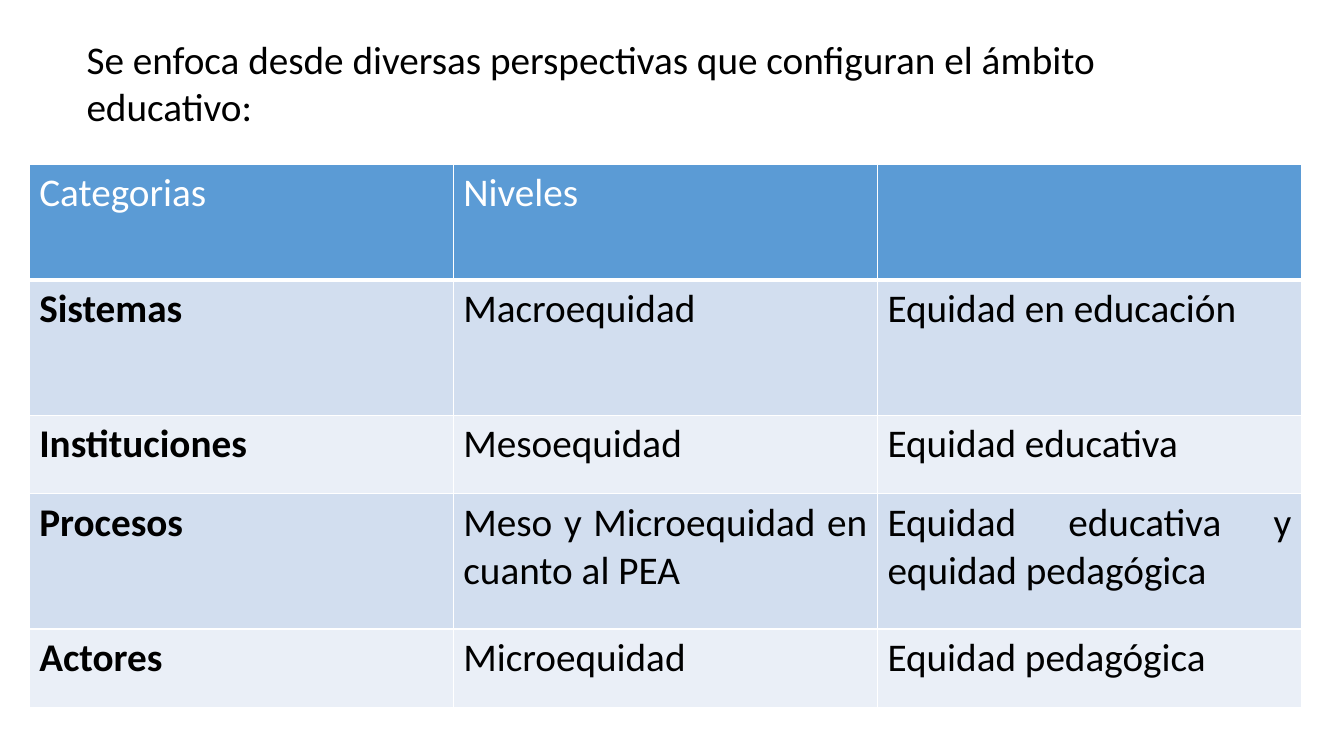
from dataclasses import dataclass

from lxml import etree
from pptx import Presentation
from pptx.dml.color import RGBColor
from pptx.enum.text import MSO_AUTO_SIZE, PP_ALIGN
from pptx.oxml.ns import qn
from pptx.util import Inches, Pt

JUSTIFY = PP_ALIGN.JUSTIFY
GROW_SHAPE = MSO_AUTO_SIZE.SHAPE_TO_FIT_TEXT
BLANK_LAYOUT = 6


@dataclass(frozen=True)
class Theme:
    font: str = "Calibri"
    size: int = 28
    text: str = "000000"
    header_text: str = "FFFFFF"
    header_fill: str = "5B9BD5"
    band_fills: tuple = ("D2DEEF", "EAEFF7")
    border: str = "FFFFFF"
    border_width: int = 1
    header_rule: int = 3


THEME = Theme()

INTRODUCTION = "Se enfoca desde diversas perspectivas que configuran el ámbito educativo:"
EQUITY_ROWS = [
    ("Categorias", "Niveles", ""),
    ("Sistemas", "Macroequidad", "Equidad en educación"),
    ("Instituciones", "Mesoequidad", "Equidad educativa"),
    ("Procesos", "Meso y Microequidad en cuanto al PEA",
     "Equidad educativa y equidad pedagógica"),
    ("Actores", "Microequidad", "Equidad pedagógica"),
]
ROW_HEIGHTS = [1.15, 1.34, 0.78, 1.34, 0.78]


def add_run(paragraph, text, color, bold=False):
    run = paragraph.add_run()
    run.text = text
    run.font.name = THEME.font
    run.font.size = Pt(THEME.size)
    run.font.bold = bold
    run.font.color.rgb = RGBColor.from_string(color)


def set_borders(cell, bottom_width):
    """Borders must precede the fill in the cell properties."""
    properties = cell._tc.get_or_add_tcPr()
    for side in "LRTB":
        width = bottom_width if side == "B" else THEME.border_width
        line = etree.SubElement(properties, qn(f"a:ln{side}"), w=str(Pt(width)))
        fill = etree.SubElement(line, qn("a:solidFill"))
        etree.SubElement(fill, qn("a:srgbClr"), val=THEME.border)


def add_introduction(slide, left, top, width, height):
    shape = slide.shapes.add_textbox(Inches(left), Inches(top), Inches(width), Inches(height))
    frame = shape.text_frame
    frame.word_wrap = True
    frame.auto_size = GROW_SHAPE
    add_run(frame.paragraphs[0], INTRODUCTION, THEME.text)


def add_equity_table(slide, left, top, width):
    column_count = len(EQUITY_ROWS[0])
    table = slide.shapes.add_table(
        len(EQUITY_ROWS), column_count,
        Inches(left), Inches(top), Inches(width), Inches(sum(ROW_HEIGHTS)),
    ).table
    for column in table.columns:
        column.width = Inches(width / column_count)

    for row_index, (texts, height) in enumerate(zip(EQUITY_ROWS, ROW_HEIGHTS)):
        table.rows[row_index].height = Inches(height)
        is_header = row_index == 0
        band = THEME.band_fills[(row_index - 1) % 2]
        for column_index, text in enumerate(texts):
            cell = table.cell(row_index, column_index)
            set_borders(cell, THEME.header_rule if is_header else THEME.border_width)
            cell.fill.solid()
            cell.fill.fore_color.rgb = RGBColor.from_string(
                THEME.header_fill if is_header else band)
            paragraph = cell.text_frame.paragraphs[0]
            paragraph.alignment = JUSTIFY
            if text:
                add_run(paragraph, text,
                        THEME.header_text if is_header else THEME.text,
                        bold=column_index == 0 and not is_header)


def main():
    presentation = Presentation()
    presentation.slide_width = Inches(13.33)
    presentation.slide_height = Inches(7.5)
    slide = presentation.slides.add_slide(presentation.slide_layouts[BLANK_LAYOUT])

    # Introductory sentence
    add_introduction(slide, 0.76, 0.3, 11.29, 1.04)
    # Categories and levels of equity
    add_equity_table(slide, 0.29, 1.63, 12.62)

    presentation.save("out.pptx")


if __name__ == "__main__":
    main()
